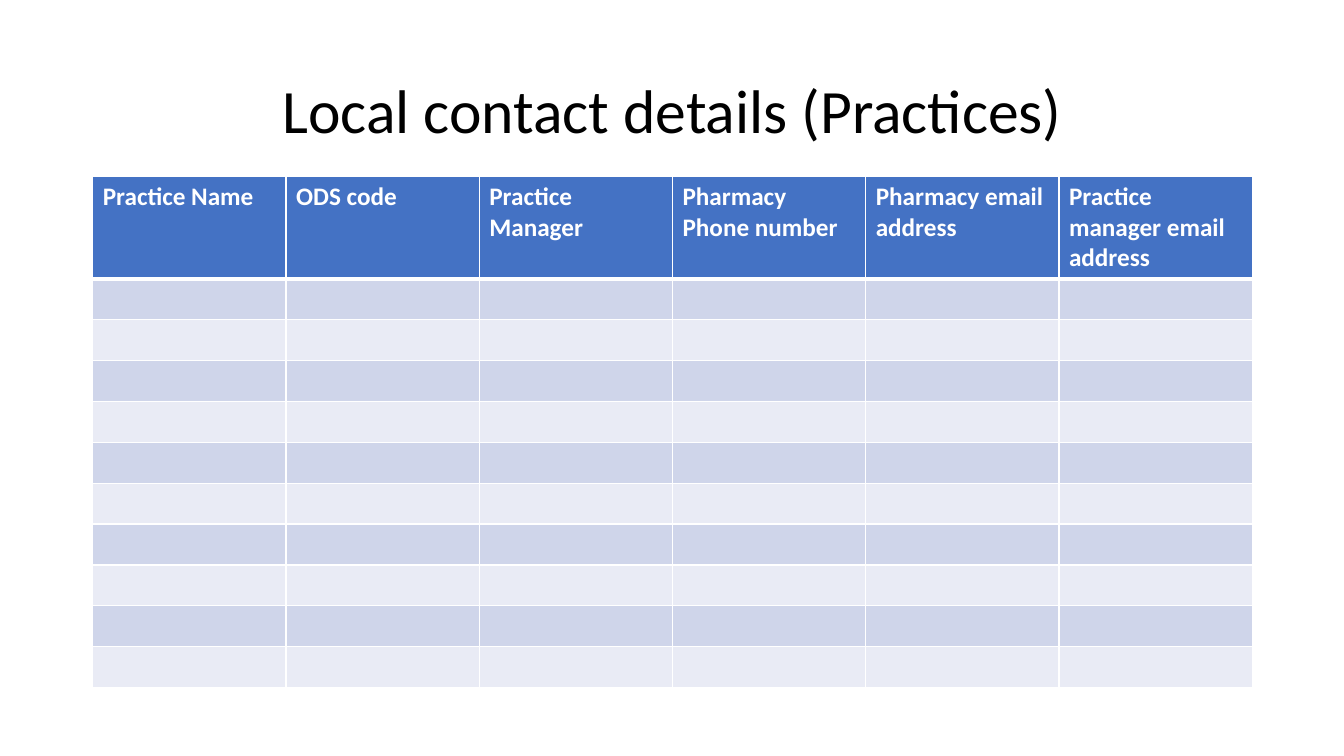
from lxml.etree import SubElement
from pptx import Presentation
from pptx.dml.color import RGBColor
from pptx.enum.text import MSO_ANCHOR, PP_ALIGN
from pptx.oxml.ns import qn
from pptx.util import Inches, Pt

BLACK = RGBColor(0x00, 0x00, 0x00)
WHITE = RGBColor(0xFF, 0xFF, 0xFF)
BLUE = RGBColor(0x44, 0x72, 0xC4)
DARK = RGBColor(0xCF, 0xD5, 0xEA)
LIGHT = RGBColor(0xE9, 0xEB, 0xF5)
FONT = "Calibri"
HEADS = ["Practice Name", "ODS code", "Practice Manager", "Pharmacy Phone number",
         "Pharmacy email address", "Practice manager email address"]
BODY_ROWS = 10
ROW_SHARE = 0.08


def add_run(para, text, size, color, bold=False):
    """Add one styled run to a paragraph."""
    run = para.add_run()
    run.text = text
    font = run.font
    font.name, font.size, font.bold = FONT, Pt(size), bold
    font.color.rgb = color


def add_title(slide, box, text):
    """Place the title in its box."""
    title = slide.shapes.title
    title.left, title.top, title.width, title.height = box
    frame = title.text_frame
    frame.word_wrap = True
    frame.vertical_anchor = MSO_ANCHOR.MIDDLE
    para = frame.paragraphs[0]
    para.alignment = PP_ALIGN.CENTER
    para.line_spacing = 0.9
    add_run(para, text, 44, BLACK)


def set_edges(cell, top, foot):
    """Draw the white borders of a cell, with top and foot widths in points."""
    props = cell._tc.get_or_add_tcPr()
    for tag, width in (("lnL", 1), ("lnR", 1), ("lnT", top), ("lnB", foot)):
        line = SubElement(props, qn(f"a:{tag}"), w=str(Pt(width)))
        fill = SubElement(line, qn("a:solidFill"))
        SubElement(fill, qn("a:srgbClr"), val=str(WHITE))


def add_grid(slide, box, heads):
    """Fill the box with a header row and empty banded rows."""
    left, top, width, height = box
    table = slide.shapes.add_table(BODY_ROWS + 1, len(heads), *box).table
    for col in table.columns:
        col.width = int(width / len(heads))
    low = int(height * ROW_SHARE)
    for num, row in enumerate(table.rows):
        row.height = low if num else height - BODY_ROWS * low
        color = (DARK if num % 2 else LIGHT) if num else BLUE
        for cell in row.cells:
            set_edges(cell, 3 if num == 1 else 1, 1 if num else 3)
            cell.fill.solid()
            cell.fill.fore_color.rgb = color
    for cell, head in zip(table.rows[0].cells, heads):
        add_run(cell.text_frame.paragraphs[0], head, 18, WHITE, True)


def main():
    """Build and save the slide."""
    deck = Presentation()
    deck.slide_width, deck.slide_height = Inches(13.33), Inches(7.5)
    slide = deck.slides.add_slide(deck.slide_layouts[5])
    left, width = Inches(0.92), Inches(11.5)
    add_title(slide, (left, Inches(0.4), width, Inches(1.45)),
              "Local contact details (Practices)")
    add_grid(slide, (left, Inches(1.75), width, Inches(5.06)), HEADS)
    deck.save("out.pptx")


if __name__ == "__main__":
    main()
